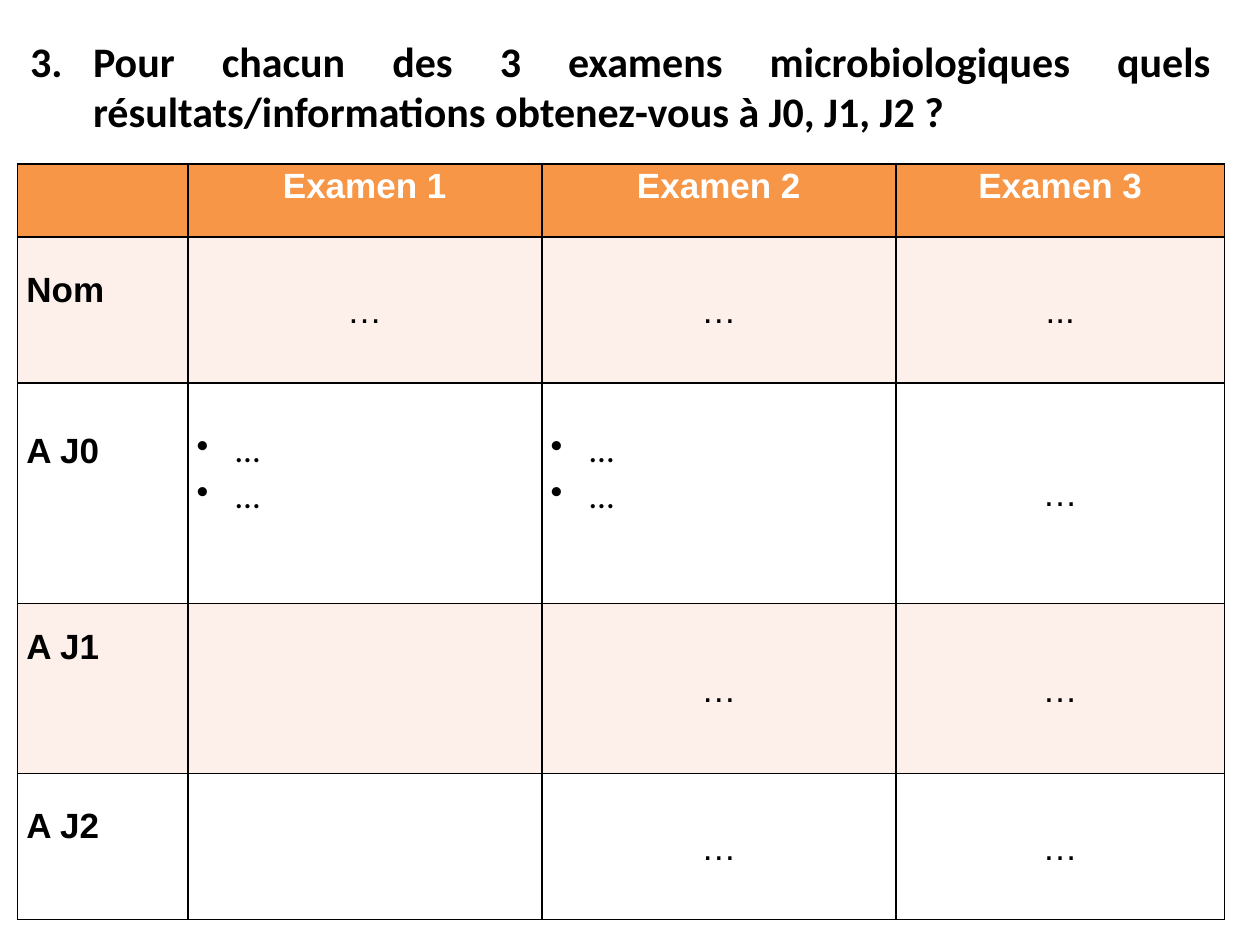
from dataclasses import dataclass
from lxml.etree import SubElement as Sub
from pptx import Presentation
from pptx.dml.color import RGBColor as Color
from pptx.enum.text import MSO_ANCHOR as Anchor, PP_ALIGN as Align
from pptx.oxml.ns import qn
from pptx.util import Inches, Pt


@dataclass
class Theme:
    ink: str = "000000"
    white: str = "FFFFFF"
    head: str = "F79646"
    band: str = "FDEFE9"
    sans: str = "Arial"
    title: str = "Calibri"
    big: int = 24
    body: int = 20
    lead: float = 1.07
    line: float = 0.34


theme = Theme()

TITLE = ("Pour chacun des 3 examens microbiologiques quels "
         "résultats/informations obtenez-vous à J0, J1, J2 ?")
HEADS = ["", "Examen 1", "Examen 2", "Examen 3"]
ROWS = [
    {"name": "Nom", "drop": 1, "cells": ["…", "…", "..."]},
    {"name": "A J0", "drop": 2, "cells": [["…", "…"], ["…", "…"], "…"]},
    {"name": "A J1", "drop": 2, "cells": ["", "…", "…"]},
    {"name": "A J2", "drop": 1, "cells": ["", "…", "…"]},
]
WIDTHS = [1.35, 2.81, 2.81, 2.61]
HEIGHTS = [0.58, 1.16, 1.75, 1.35, 1.16]
LEFT = 0.14


def write(frame, lines, size=theme.body, font=theme.sans, color=theme.ink,
          bold=False, align=Align.LEFT, lead=theme.lead, indent=0, mark=None):
    frame.word_wrap = True
    for i, line in enumerate(lines):
        para = frame.paragraphs[0] if i == 0 else frame.add_paragraph()
        para.alignment = align
        para.line_spacing = lead
        if mark:
            props = para._p.get_or_add_pPr()
            props.set("marL", str(Inches(indent)))
            props.set("indent", str(-Inches(indent)))
            tag, attrs = mark
            Sub(props, qn(tag), attrs)
        run = para.add_run()
        run.text = line
        run.font.size = Pt(size)
        run.font.name = font
        run.font.bold = bold
        run.font.color.rgb = Color.from_string(color)


def paint(cell, fill):
    props = cell._tc.get_or_add_tcPr()
    for side in "LRTB":
        edge = Sub(props, qn(f"a:ln{side}"), {"w": str(Pt(1))})
        Sub(Sub(edge, qn("a:solidFill")), qn("a:srgbClr"), {"val": theme.ink})
    cell.fill.solid()
    cell.fill.fore_color.rgb = Color.from_string(fill)
    cell.margin_left = cell.margin_right = Inches(0.07)
    cell.margin_top = cell.margin_bottom = 0


def fill_cell(cell, item):
    if isinstance(item, list):
        cell.margin_top = Inches(theme.line)
        write(cell.text_frame, item, font=theme.title, indent=0.31,
              mark=("a:buChar", {"char": "•"}))
    elif item:
        cell.vertical_anchor = Anchor.MIDDLE
        write(cell.text_frame, [item], align=Align.CENTER)


def add_title(slide):
    box = slide.shapes.add_textbox(Inches(LEFT), Inches(0.23), Inches(9.57), Inches(1.26))
    write(box.text_frame, [TITLE], size=theme.big, font=theme.title, bold=True,
          align=Align.JUSTIFY, lead=1.0, indent=0.5,
          mark=("a:buAutoNum", {"type": "arabicPeriod", "startAt": "3"}))


def add_grid(slide):
    grid = slide.shapes.add_table(
        len(HEIGHTS), len(WIDTHS), Inches(LEFT), Inches(1.3),
        Inches(sum(WIDTHS)), Inches(sum(HEIGHTS))).table
    for col, width in zip(grid.columns, WIDTHS):
        col.width = Inches(width)
    for row, height in zip(grid.rows, HEIGHTS):
        row.height = Inches(height)
    for c, head in enumerate(HEADS):
        cell = grid.cell(0, c)
        paint(cell, theme.head)
        if head:
            write(cell.text_frame, [head], color=theme.white, bold=True, align=Align.CENTER)
    for r, row in enumerate(ROWS, 1):
        fill = theme.band if r % 2 else theme.white
        label = grid.cell(r, 0)
        paint(label, fill)
        label.vertical_anchor = Anchor.MIDDLE
        label.margin_bottom = Inches(theme.line * row["drop"])
        write(label.text_frame, [row["name"]], bold=True)
        for c, item in enumerate(row["cells"], 1):
            cell = grid.cell(r, c)
            paint(cell, fill)
            fill_cell(cell, item)


def main():
    deck = Presentation()
    deck.slide_width, deck.slide_height = Inches(10), Inches(7.5)
    slide = deck.slides.add_slide(deck.slide_layouts[6])
    add_title(slide)
    add_grid(slide)
    deck.save("out.pptx")


if __name__ == "__main__":
    main()
